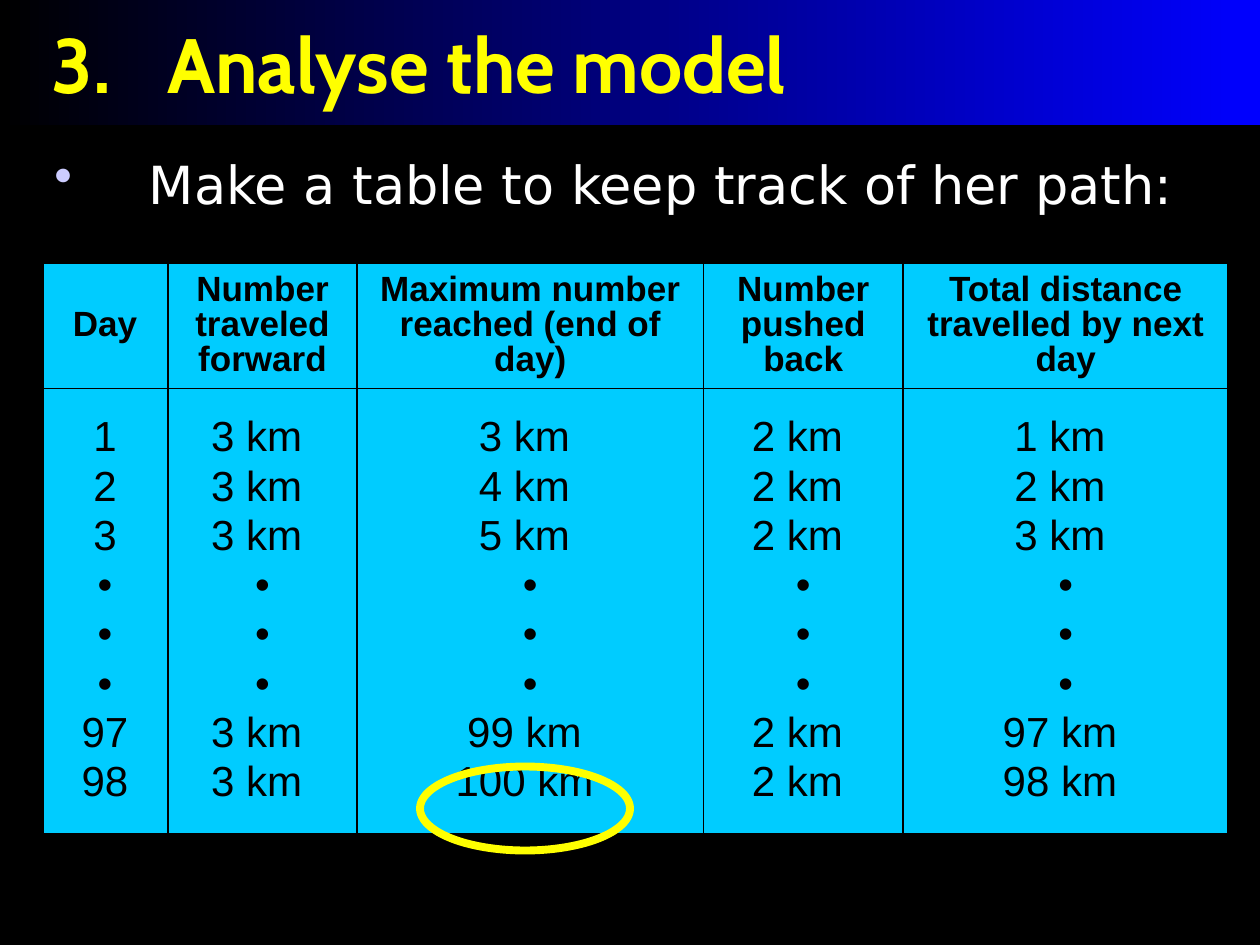
from lxml import etree
from pptx import Presentation
from pptx.dml.color import RGBColor
from pptx.enum.shapes import MSO_SHAPE
from pptx.enum.text import MSO_ANCHOR, MSO_AUTO_SIZE, PP_ALIGN
from pptx.oxml.ns import qn
from pptx.util import Pt

OVAL = MSO_SHAPE.OVAL
MIDDLE = MSO_ANCHOR.MIDDLE
NO_AUTOFIT = MSO_AUTO_SIZE.NONE
LEFT, CENTER = PP_ALIGN.LEFT, PP_ALIGN.CENTER
TITLE_ONLY = 5

# Content
TITLE, TITLE_NUMBER = "Analyse the model", 3
LEAD = "Make a table to keep track of her path:"
DOTS = ["•"] * 3


def distances(first, last):
    """Entries before and after the dots, in kilometres."""
    return [f"{n} km " for n in first] + DOTS + [f"{n} km " for n in last]


# Header, column width, entries
COLUMNS = [
    ("Day", 72, ["1", "2", "3", *DOTS, "97", "98"]),
    ("Number traveled forward", 108, distances([3, 3, 3], [3, 3])),
    ("Maximum number reached (end of day)", 198, distances([3, 4, 5], [99, 100])),
    ("Number pushed back", 114, distances([2, 2, 2], [2, 2])),
    ("Total distance travelled by next day", 186, distances([1, 2, 3], [97, 98])),
]
ROW_HEIGHTS = [72, 255]
TABLE_LEFT, TABLE_TOP = 24, 150

THEME = {
    "black": "000000", "blue": "0000FF", "yellow": "FFFF00", "white": "FFFFFF",
    "cell": "00CCFF", "bullet": "CCCCFF",
    "title": ("Cabin", 44), "lead": ("DejaVu Sans", 30),
    "header": ("Arial", 20), "entry": ("Arial", 24),
    "outer_line": 2.25, "inner_line": 1, "ring_line": 4.5,
}


def color(name):
    return RGBColor.from_string(THEME[name])


def add_span(para, text, style, ink, bold=False):
    span = para.add_run()
    span.text = text
    span.font.name, size = THEME[style]
    span.font.size = Pt(size)
    span.font.bold = bold
    span.font.color.rgb = color(ink)


def add_solid(parent, name):
    fill = etree.SubElement(parent, qn("a:solidFill"))
    etree.SubElement(fill, qn("a:srgbClr"), val=THEME[name])


def hang(para, indent):
    props = para._p.get_or_add_pPr()
    props.set("marL", str(Pt(indent)))
    props.set("indent", str(-Pt(indent)))
    return props


def set_borders(cell, widths):
    props = cell._tc.get_or_add_tcPr()
    for place, (side, width) in enumerate(widths.items()):
        line = etree.Element(qn(f"a:ln{side}"), w=str(Pt(width)))
        add_solid(line, "black")
        props.insert(place, line)


def fill_cell(cell, lines, style, bold):
    cell.fill.solid()
    cell.fill.fore_color.rgb = color("cell")
    cell.vertical_anchor = MIDDLE
    frame = cell.text_frame
    for number, line in enumerate(lines):
        para = frame.add_paragraph() if number else frame.paragraphs[0]
        para.alignment = CENTER
        para.line_spacing = 0.9
        if number:
            para.space_before = Pt(4.1)
        add_span(para, line, style, "black", bold)


def add_title(page):
    box = page.shapes.title
    box.left, box.top, box.width, box.height = Pt(0), Pt(0), Pt(720), Pt(71.3)
    box.fill.gradient()
    box.fill.gradient_angle = 0
    for stop, name in zip(box.fill.gradient_stops, ("black", "blue")):
        stop.color.rgb = color(name)
    frame = box.text_frame
    frame.auto_size = NO_AUTOFIT
    frame.vertical_anchor = MIDDLE
    frame.margin_left, frame.margin_right = Pt(29.5), Pt(10)
    frame.margin_top = frame.margin_bottom = Pt(9.4)
    para = frame.paragraphs[0]
    para.alignment = LEFT
    etree.SubElement(hang(para, 66), qn("a:buAutoNum"),
                     type="arabicPeriod", startAt=str(TITLE_NUMBER))
    add_span(para, TITLE, "title", "yellow", bold=True)


def add_lead(page):
    box = page.shapes.add_textbox(Pt(24), Pt(90), Pt(696), Pt(66))
    frame = box.text_frame
    frame.word_wrap = True
    frame.margin_top = Pt(7)
    para = frame.paragraphs[0]
    para.line_spacing = 0.7
    props = hang(para, 54)
    tint = etree.SubElement(props, qn("a:buClr"))
    etree.SubElement(tint, qn("a:srgbClr"), val=THEME["bullet"])
    etree.SubElement(props, qn("a:buChar"), char="•")
    add_span(para, LEAD, "lead", "white")


def add_path_table(page):
    total_width = sum(width for _, width, _ in COLUMNS)
    table = page.shapes.add_table(
        len(ROW_HEIGHTS), len(COLUMNS), Pt(TABLE_LEFT), Pt(TABLE_TOP),
        Pt(total_width), Pt(sum(ROW_HEIGHTS))).table
    table.first_row = table.horz_banding = False
    for row, height in zip(table.rows, ROW_HEIGHTS):
        row.height = Pt(height)
    outer, inner = THEME["outer_line"], THEME["inner_line"]
    last = len(COLUMNS) - 1
    for index, (header, width, entries) in enumerate(COLUMNS):
        table.columns[index].width = Pt(width)
        fill_cell(table.cell(0, index), [header], "header", True)
        fill_cell(table.cell(1, index), entries, "entry", False)
        for row in (0, 1):
            set_borders(table.cell(row, index), {
                "L": outer if index == 0 else inner,
                "R": outer if index == last else inner,
                "T": outer if row == 0 else inner,
                "B": outer if row == 1 else inner,
            })


def add_ring(page):
    ring = page.shapes.add_shape(OVAL, Pt(240), Pt(438), Pt(120), Pt(48))
    ring.shadow.inherit = False
    ring.fill.background()
    ring.line.color.rgb = color("yellow")
    ring.line.width = Pt(THEME["ring_line"])


def main():
    deck = Presentation()
    deck.slide_width, deck.slide_height = Pt(720), Pt(540)
    page = deck.slides.add_slide(deck.slide_layouts[TITLE_ONLY])
    page.background.fill.solid()
    page.background.fill.fore_color.rgb = color("black")
    add_title(page)
    add_lead(page)
    add_path_table(page)
    add_ring(page)
    deck.save("out.pptx")


if __name__ == "__main__":
    main()
